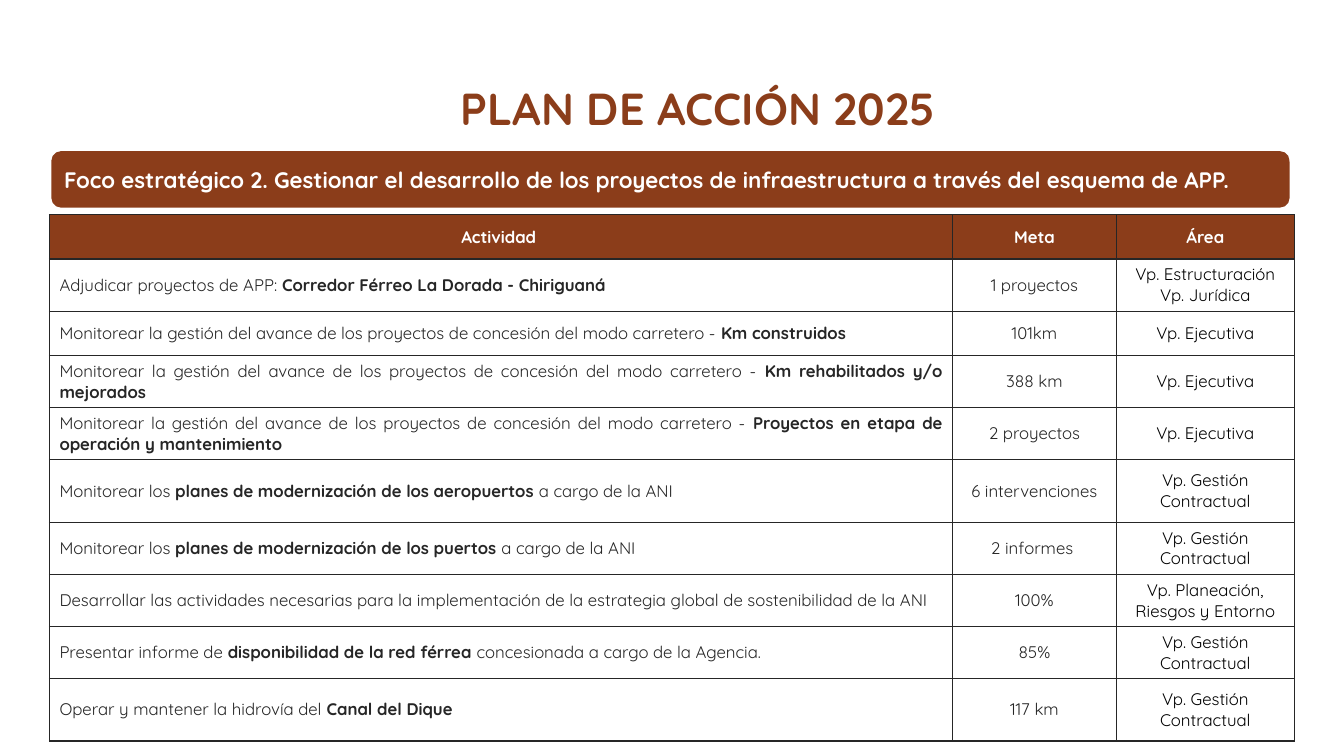
from lxml.etree import SubElement
from pptx import Presentation
from pptx.dml.color import RGBColor
from pptx.enum.shapes import MSO_SHAPE as Shape
from pptx.enum.text import MSO_ANCHOR as Anchor, MSO_AUTO_SIZE as AutoSize, PP_ALIGN as Align
from pptx.oxml.ns import qn
from pptx.util import Inches, Pt

FONT = "Quicksand"
BROWN, WHITE, BLACK, DARK = "8B3D1A", "FFFFFF", "000000", "262626"

TITLE = "PLAN DE ACCIÓN 2025"
FOCUS = ("Foco estratégico 2. Gestionar el desarrollo de los proyectos de "
         "infraestructura a través del esquema de APP.")
HEADERS = ["Actividad ", "Meta", "Área"]
COLUMN_WIDTHS = [8.96, 1.62, 1.77]
ROW_HEIGHTS = [0.44, 0.44, 0.44, 0.44, 0.44, 0.62, 0.49, 0.44, 0.5, 0.62]
ROAD = "Monitorear la gestión del avance de los proyectos de concesión del modo carretero - "
EXECUTIVE = "Vp. Ejecutiva"
CONTRACTS = "Vp. Gestión Contractual"
ACTIVITIES = [
    ("Adjudicar proyectos de APP: **Corredor Férreo La Dorada - Chiriguaná",
     "1 proyectos", "Vp. Estructuración\nVp. Jurídica"),
    (ROAD + "**Km construidos", "101km", EXECUTIVE),
    (ROAD + "**Km rehabilitados y/o mejorados", "388 km", EXECUTIVE),
    (ROAD + "**Proyectos en etapa de operación y mantenimiento", "2 proyectos", EXECUTIVE),
    ("Monitorear los **planes de modernización de los aeropuertos **a cargo de la ANI",
     "6 intervenciones", CONTRACTS),
    ("Monitorear los **planes de modernización de los puertos **a cargo de la ANI",
     "2 informes ", CONTRACTS),
    ("Desarrollar las actividades necesarias para la implementación de la estrategia "
     "global de sostenibilidad de la ANI", "100%", "Vp. Planeación, Riesgos y Entorno"),
    ("Presentar informe de **disponibilidad de la red férrea **concesionada a cargo "
     "de la Agencia.", "85%", CONTRACTS),
    ("Operar y mantener la hidrovía del **Canal del Dique", "117 km", CONTRACTS),
]


def color(value):
    """Turn a hex string into a colour."""
    return RGBColor.from_string(value)


def add_run(paragraph, text, size, text_color, bold):
    """Add one formatted run."""
    run = paragraph.add_run()
    run.text = text
    run.font.name = FONT
    run.font.size = Pt(size)
    run.font.bold = bold
    run.font.color.rgb = color(text_color)


def add_title(slide):
    """Place the slide title in its placeholder."""
    title = slide.shapes.title
    title.left, title.top = Inches(2.95), Inches(0.82)
    title.width, title.height = Inches(7.95), Inches(0.56)
    frame = title.text_frame
    frame.word_wrap = True
    frame.auto_size = AutoSize.NONE
    frame.vertical_anchor = Anchor.MIDDLE
    paragraph = frame.paragraphs[0]
    paragraph.alignment = Align.CENTER
    paragraph.line_spacing = 0.9
    add_run(paragraph, TITLE, 32, BROWN, True)


def add_focus_banner(slide):
    """Add the rounded banner with the strategic focus."""
    banner = slide.shapes.add_shape(
        Shape.ROUNDED_RECTANGLE, Inches(0.51), Inches(1.5), Inches(12.28), Inches(0.56))
    banner.shadow.inherit = False
    banner.fill.solid()
    banner.fill.fore_color.rgb = color(BROWN)
    banner.line.fill.background()
    frame = banner.text_frame
    frame.word_wrap = True
    frame.vertical_anchor = Anchor.MIDDLE
    paragraph = frame.paragraphs[0]
    paragraph.alignment = Align.LEFT
    add_run(paragraph, FOCUS, 16, WHITE, True)


def set_borders(cell):
    """Draw a thin dark line on every side of a cell."""
    properties = cell._tc.get_or_add_tcPr()
    for side in ("a:lnL", "a:lnR", "a:lnT", "a:lnB"):
        line = SubElement(properties, qn(side), w=str(Pt(1)))
        fill = SubElement(line, qn("a:solidFill"))
        SubElement(fill, qn("a:srgbClr"), val=DARK)


def fill_cell(cell, text, alignment, text_color, header=False):
    """Write a cell, where double asterisks switch bold on and off."""
    set_borders(cell)
    if header:
        cell.fill.solid()
        cell.fill.fore_color.rgb = color(BROWN)
    else:
        cell.fill.background()
    cell.vertical_anchor = Anchor.MIDDLE
    frame = cell.text_frame
    for index, line in enumerate(text.split("\n")):
        paragraph = frame.add_paragraph() if index else frame.paragraphs[0]
        paragraph.alignment = alignment
        for position, part in enumerate(line.split("**")):
            add_run(paragraph, part, 12, text_color, header or position % 2 == 1)


def add_activity_table(slide):
    """Add the table of activities, goals and areas."""
    table = slide.shapes.add_table(
        len(ROW_HEIGHTS), len(COLUMN_WIDTHS), Inches(0.49), Inches(2.13),
        Inches(sum(COLUMN_WIDTHS)), Inches(sum(ROW_HEIGHTS))).table
    table.first_row = True
    table.horz_banding = False
    for column, width in zip(table.columns, COLUMN_WIDTHS):
        column.width = Inches(width)
    for row, height in zip(table.rows, ROW_HEIGHTS):
        row.height = Inches(height)
    for column, text in enumerate(HEADERS):
        fill_cell(table.cell(0, column), text, Align.CENTER, WHITE, header=True)
    styles = [(Align.JUSTIFY, DARK), (Align.CENTER, DARK), (Align.CENTER, BLACK)]
    for row, activity in enumerate(ACTIVITIES, start=1):
        for column, (text, style) in enumerate(zip(activity, styles)):
            fill_cell(table.cell(row, column), text, *style)


def main():
    """Build and save the slide."""
    presentation = Presentation()
    presentation.slide_width = Inches(13.33)
    presentation.slide_height = Inches(7.5)
    slide = presentation.slides.add_slide(presentation.slide_layouts[5])
    add_activity_table(slide)
    add_focus_banner(slide)
    add_title(slide)
    presentation.save("out.pptx")


if __name__ == "__main__":
    main()
